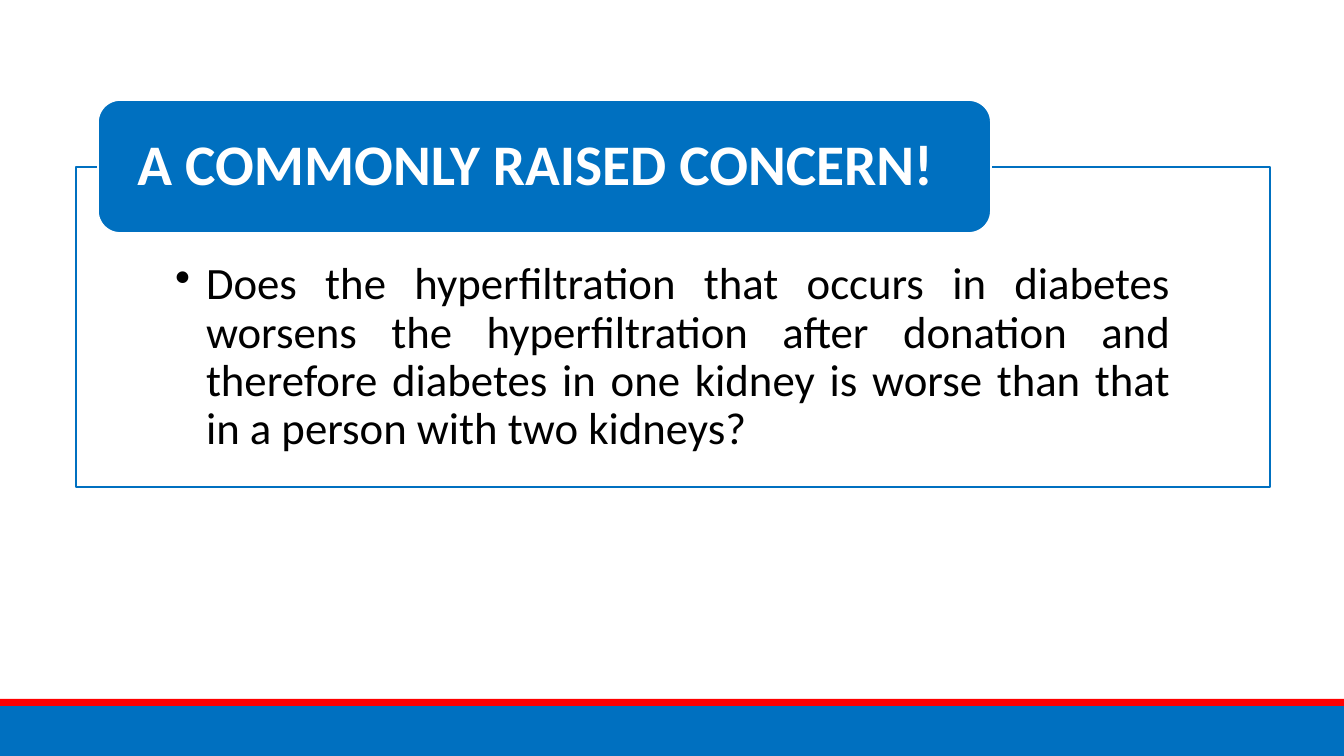
from dataclasses import dataclass
from typing import Optional

from lxml import etree
from pptx import Presentation
from pptx.dml.color import RGBColor
from pptx.enum import shapes, text
from pptx.oxml import ns
from pptx.slide import Slide
from pptx import util as u

EMU_PER_PX = 914400 / 100.8
BLUE, RED, WHITE, BLACK = "0070C0", "FF0000", "FFFFFF", "000000"
RECT = shapes.MSO_SHAPE.RECTANGLE
ROUNDED = shapes.MSO_SHAPE.ROUNDED_RECTANGLE


@dataclass(frozen=True)
class Wording:
    content: str
    size: int
    color: str
    insets: tuple[int, int, int, int]
    align: text.PP_ALIGN = text.PP_ALIGN.LEFT
    anchor: text.MSO_ANCHOR = text.MSO_ANCHOR.TOP
    bold: bool = False
    bullet_indent: int = 0


@dataclass(frozen=True)
class Panel:
    left: int
    top: int
    width: int
    height: int
    fill: str
    line: Optional[str] = None
    kind: shapes.MSO_SHAPE = RECT
    wording: Optional[Wording] = None


CONCERN = Wording(
    "Does the hyperfiltration that occurs in diabetes worsens the hyperfiltration "
    "after donation and therefore diabetes in one kidney is worse than that in a "
    "person with two kidneys?",
    32, BLACK, (99, 94, 99, 25), align=text.PP_ALIGN.JUSTIFY, bullet_indent=31,
)
TITLE = Wording(
    "A COMMONLY RAISED CONCERN!", 41, WHITE, (33, 0, 33, 0),
    anchor=text.MSO_ANCHOR.MIDDLE, bold=True,
)
PANELS = (
    Panel(0, 706, 1344, 50, BLUE),
    Panel(0, 699, 1344, 7, RED),
    Panel(76, 167, 1194, 320, WHITE, BLUE, wording=CONCERN),
    Panel(98, 100, 893, 133, BLUE, WHITE, ROUNDED, TITLE),
)


def px(value: int) -> u.Emu:
    return u.Emu(round(value * EMU_PER_PX))


def rgb(value: str) -> RGBColor:
    return RGBColor.from_string(value)


def write(frame, wording: Wording) -> None:
    frame.word_wrap = True
    frame.vertical_anchor = wording.anchor
    sides = ("left", "top", "right", "bottom")
    for side, inset in zip(sides, wording.insets):
        setattr(frame, f"margin_{side}", px(inset))
    para = frame.paragraphs[0]
    para.text = wording.content
    para.alignment = wording.align
    para.line_spacing = 0.9
    para.font.name = "Calibri"
    para.font.size = u.Pt(wording.size)
    para.font.bold = wording.bold
    para.font.color.rgb = rgb(wording.color)
    if wording.bullet_indent:
        indent = px(wording.bullet_indent)
        properties = para._p.get_or_add_pPr()
        properties.set("marL", str(indent))
        properties.set("indent", str(-indent))
        bullet = etree.Element(ns.qn("a:buChar"), char="•")
        properties.find(ns.qn("a:defRPr")).addprevious(bullet)


def draw(page: Slide, panel: Panel) -> None:
    box = page.shapes.add_shape(
        panel.kind, px(panel.left), px(panel.top), px(panel.width), px(panel.height)
    )
    box.shadow.inherit = False
    box.fill.solid()
    box.fill.fore_color.rgb = rgb(panel.fill)
    if panel.line:
        box.line.color.rgb = rgb(panel.line)
        box.line.width = u.Pt(1.25)
    else:
        box.line.fill.background()
    if panel.wording:
        write(box.text_frame, panel.wording)


def main() -> None:
    deck = Presentation()
    deck.slide_width, deck.slide_height = px(1344), px(756)
    page = deck.slides.add_slide(deck.slide_layouts[6])
    for panel in PANELS:
        draw(page, panel)
    deck.save("out.pptx")


if __name__ == "__main__":
    main()
